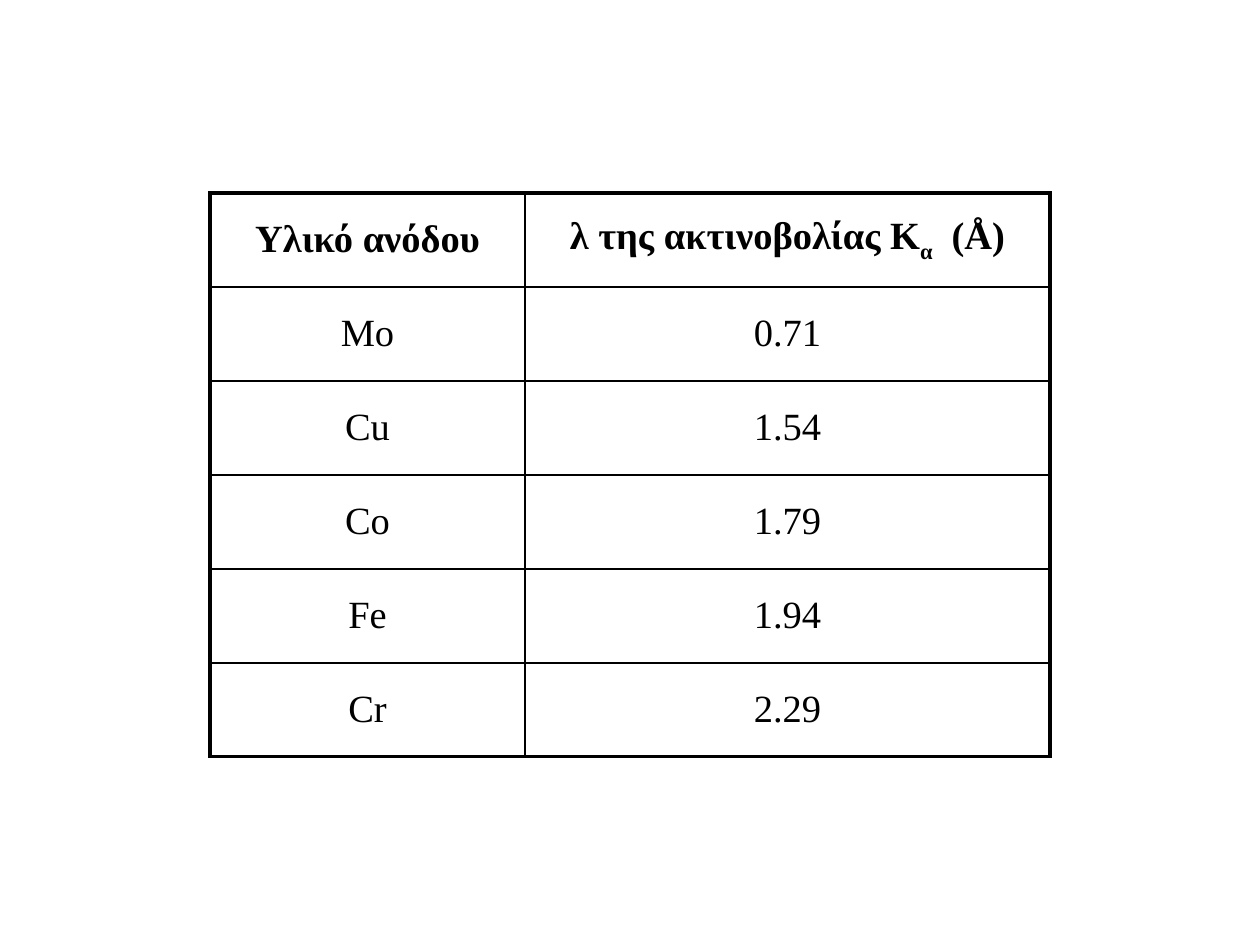
from lxml.etree import SubElement
from pptx import Presentation
from pptx.dml.color import RGBColor
from pptx.enum.text import MSO_ANCHOR, PP_ALIGN
from pptx.oxml.ns import qn
from pptx.util import Emu, Pt

BLACK = RGBColor(0, 0, 0)
FONT = "Times New Roman"
OUTER, INNER = Pt(2.25), Pt(1)
COLUMN_WIDTHS = [315, 525]
ROW_HEIGHT = 94
ANODES = [("Mo", "0.71"), ("Cu", "1.54"), ("Co", "1.79"), ("Fe", "1.94"), ("Cr", "2.29")]
ROWS = [
    (["Υλικό ανόδου"], ["λ της ακτινοβολίας K", "α", "  (Å)"]),
    *(([material], [wavelength]) for material, wavelength in ANODES),
]


def px(n):
    return Emu(round(n * 914400 / 126))


def add_border(cell, side, width):
    line = SubElement(cell._tc.get_or_add_tcPr(), qn(f"a:ln{side}"), w=str(width))
    fill = SubElement(line, qn("a:solidFill"))
    SubElement(fill, qn("a:srgbClr"), val=str(BLACK))


presentation = Presentation()
presentation.slide_width, presentation.slide_height = px(1260), px(945)
slide = presentation.slides.add_slide(presentation.slide_layouts[6])

wavelengths = slide.shapes.add_table(
    len(ROWS), len(COLUMN_WIDTHS), px(210), px(193),
    px(sum(COLUMN_WIDTHS)), px(ROW_HEIGHT * len(ROWS)),
).table
wavelengths.first_row = False
wavelengths.horz_banding = False
for column, width in zip(wavelengths.columns, COLUMN_WIDTHS):
    column.width = px(width)

last_row, last_column = len(ROWS) - 1, len(COLUMN_WIDTHS) - 1
for r, row in enumerate(ROWS):
    wavelengths.rows[r].height = px(ROW_HEIGHT)
    for c, pieces in enumerate(row):
        cell = wavelengths.cell(r, c)
        cell.vertical_anchor = MSO_ANCHOR.MIDDLE
        on_edge = {"L": c == 0, "R": c == last_column, "T": r == 0, "B": r == last_row}
        for side, is_outer in on_edge.items():
            add_border(cell, side, OUTER if is_outer else INNER)
        cell.fill.background()

        paragraph = cell.text_frame.paragraphs[0]
        paragraph.alignment = PP_ALIGN.CENTER
        paragraph.space_before = Pt(4.4)
        for piece in pieces:
            run = paragraph.add_run()
            run.text = piece
            run.font.name = FONT
            run.font.size = Pt(22)
            run.font.bold = r == 0
            run.font.color.rgb = BLACK
            if piece == "α":
                run.font._element.set("baseline", "-25000")

presentation.save("out.pptx")
